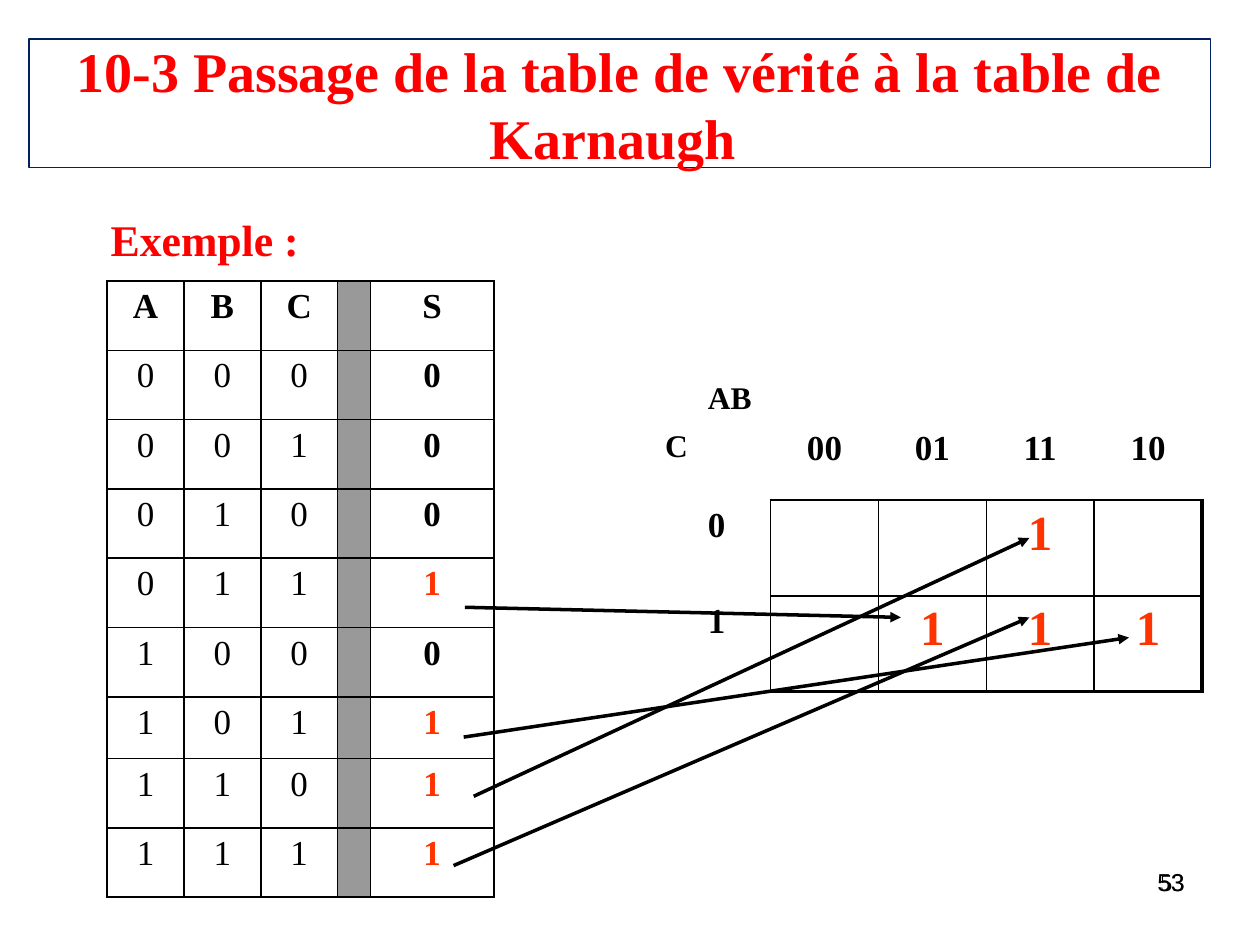
from dataclasses import dataclass
from itertools import product
from lxml import etree
from pptx import Presentation
from pptx.dml.color import RGBColor as Rgb
from pptx.enum.shapes import MSO_CONNECTOR as Link
from pptx.enum.text import MSO_ANCHOR as Anchor, PP_ALIGN as Align
from pptx.oxml.ns import qn
from pptx.util import Inches, Pt


@dataclass(frozen=True)
class Theme:
    font: str = "Times New Roman"
    sans: str = "Arial"
    ink: str = "000000"
    red: str = "FF0000"
    mark: str = "FF3300"
    gray: str = "999999"
    frame: str = "002060"
    head: int = 32
    sub: int = 25
    one: int = 28
    cell: int = 20
    axis: int = 18
    page: int = 14
    thin: float = 1
    thick: float = 2.25


T = Theme()


def grid(n):
    """Length of n steps on a grid of 100 columns by 75 rows."""
    return Inches(n / 10)


def style(frame, text, size, color=T.ink, bold=True, font=T.font, align=None):
    frame.text = text
    para = frame.paragraphs[0]
    para.alignment = align
    for run in para.runs:
        run.font.name, run.font.size, run.font.bold = font, Pt(size), bold
        run.font.color.rgb = Rgb.from_string(color)


def label(slide, at, text, size, wrap=True, **look):
    box = slide.shapes.add_textbox(*map(grid, at))
    box.text_frame.word_wrap = wrap
    style(box.text_frame, text, size, **look)
    return box


def edge(cell, widths):
    """Set the left, right, top and bottom borders; 0 means none."""
    props = cell._tc.get_or_add_tcPr()
    for i, (side, width) in enumerate(zip("LRTB", widths)):
        line = etree.Element(qn(f"a:ln{side}"), w=str(int(Pt(width))))
        if width:
            fill = etree.SubElement(line, qn("a:solidFill"))
            etree.SubElement(fill, qn("a:srgbClr"), val=T.ink)
        else:
            etree.SubElement(line, qn("a:noFill"))
        props.insert(i, line)


def table(slide, left, top, cols, rows):
    size = sum(cols), sum(rows)
    shape = slide.shapes.add_table(len(rows), len(cols), *map(grid, (left, top, *size)))
    tab = shape.table
    tab.first_row = tab.horz_banding = False
    for col, width in zip(tab.columns, cols):
        col.width = grid(width)
    for row, height in zip(tab.rows, rows):
        row.height = grid(height)
    for cell in tab.iter_cells():
        cell.fill.background()
    return tab


def arrow(slide, start, end):
    link = slide.shapes.add_connector(Link.STRAIGHT, *map(grid, start + end))
    link.line.color.rgb = Rgb.from_string(T.ink)
    link.line.width = Pt(2)
    props = link._element.spPr
    etree.SubElement(props.find(qn("a:ln")), qn("a:tailEnd"), type="triangle")
    etree.SubElement(props, qn("a:effectLst"))


def vote(a, b, c):
    """The function S: 1 when at least two inputs are 1."""
    return int(a + b + c >= 2)


def truth(slide):
    rows = [5.5] * 6 + [4.9] + [5.5] * 2
    tab = table(slide, 8.5, 22.3, [6.1, 6.1, 6.1, 2.6, 9.8], rows)
    data = [["A", "B", "C", "", "S"]]
    data += [[*bits, "", vote(*bits)] for bits in product((0, 1), repeat=3)]
    for r, c in product(range(9), range(5)):
        cell, value = tab.cell(r, c), data[r][c]
        if c == 3:
            cell.fill.solid()
            cell.fill.fore_color.rgb = Rgb.from_string(T.gray)
        else:
            color = T.mark if c == 4 and value == 1 else T.ink
            style(cell.text_frame, str(value), T.cell, color,
                  bold=r == 0 or c == 4, align=Align.CENTER)
        edge(cell, [T.thin] * 4)


def karnaugh(slide):
    tab = table(slide, 52.6, 30.1, [8.56] * 5, [9.6, 7.6, 7.6])
    codes = ["00", "01", "11", "10"]
    for r, c in product(range(3), range(5)):
        cell = tab.cell(r, c)
        text, size, color = "", T.cell, T.ink
        if r == 0 and c:
            text = codes[c - 1]
            cell.margin_top = grid(4)
        elif r and c == 0:
            text = str(r - 1)
        elif r and vote(*map(int, codes[c - 1]), r - 1):
            text, size, color = "1", T.one, T.mark
        if text:
            style(cell.text_frame, text, size, color, align=Align.CENTER)
        # Only the value cells are ruled, heavier on the right and below
        left = T.thin if r and c else 0
        right = (T.thick if c == 4 else T.thin) if r else 0
        below = (T.thick if r == 2 else T.thin) if c else 0
        edge(cell, [left, right, left, below])


def main():
    deck = Presentation()
    deck.slide_width, deck.slide_height = grid(100), grid(75)
    slide = deck.slides.add_slide(deck.slide_layouts[6])

    # Page number, set in both fonts
    for font in (T.sans, T.font):
        label(slide, (71.7, 68.3, 23.3, 5.2), "53", T.page,
              bold=False, font=font, align=Align.RIGHT)

    # Tables and axis names
    truth(slide)
    karnaugh(slide)
    label(slide, (55.2, 29.5, 8.5, 4), "AB", T.axis)
    label(slide, (51.8, 33.3, 5.1, 4), "C", T.axis)

    # From each 1 of the truth table to its Karnaugh cell
    for start, end in (
        ((36.9, 48.2), (71.5, 49)),
        ((36.8, 58.5), (89.6, 50.6)),
        ((37.6, 63.2), (81.7, 42.7)),
        ((36, 68.7), (81.7, 49)),
    ):
        arrow(slide, start, end)

    # Headings
    label(slide, (7.8, 16.4, 17.1, 5.2), "Exemple :", T.sub, wrap=False, color=T.red)
    title = label(slide, (2.3, 3.1, 93.8, 10.2),
                  "10-3 Passage de la table de vérité à la table de Karnaugh ",
                  T.head, color=T.red, align=Align.CENTER)
    title.text_frame.vertical_anchor = Anchor.MIDDLE
    title.line.color.rgb = Rgb.from_string(T.frame)
    title.line.width = Pt(0.75)

    deck.save("out.pptx")


if __name__ == "__main__":
    main()
